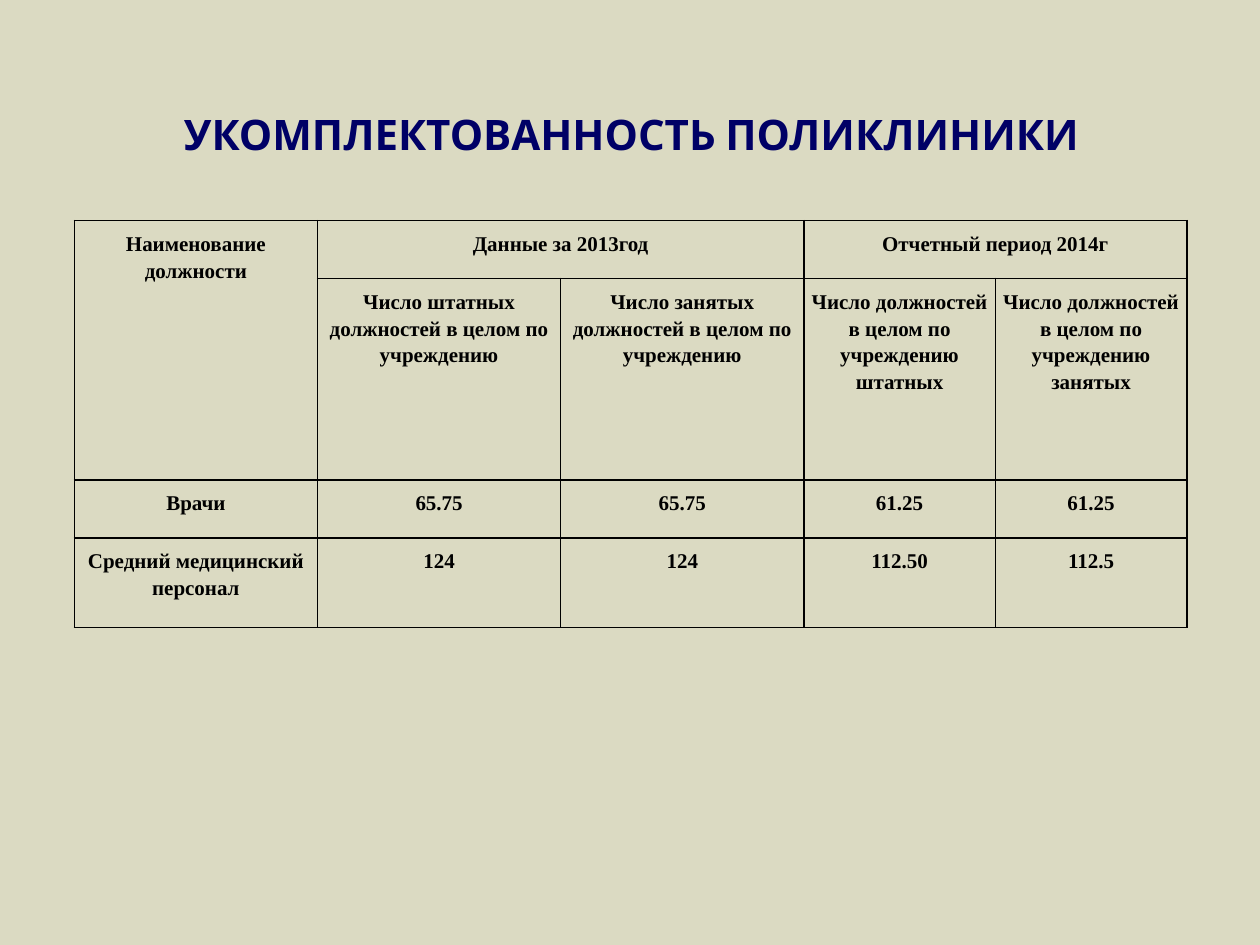
from dataclasses import dataclass

from lxml import etree
from pptx import Presentation
from pptx.dml.color import RGBColor
from pptx.enum.text import MSO_ANCHOR, PP_ALIGN
from pptx.oxml.ns import qn
from pptx.slide import Slide
from pptx.util import Inches, Pt

CENTER = PP_ALIGN.CENTER
MIDDLE = MSO_ANCHOR.MIDDLE
TOP = MSO_ANCHOR.TOP
BACKGROUND = "DBDAC2"
BLACK = "000000"
NAVY = "000066"
BLANK_LAYOUT = 6
COLUMN_WIDTHS = [1.93, 1.93, 1.93, 1.52, 1.52]
ROW_HEIGHTS = [0.46, 1.6, 0.46, 0.71]
MERGES = [((0, 0), (1, 0)), ((0, 1), (0, 2)), ((0, 3), (0, 4))]
STAFFING = [
    ["Наименование должности", "Данные за 2013год", "", "Отчетный период 2014г", ""],
    [
        "",
        "Число штатных должностей в целом по учреждению",
        "Число занятых должностей в целом по учреждению",
        "Число должностей в целом по учреждению штатных",
        "Число должностей в целом по учреждению занятых",
    ],
    ["Врачи", "65.75", "65.75", "61.25", "61.25"],
    ["Средний медицинский персонал", "124", "124", "112.50", "112.5"],
]


@dataclass
class TextStyle:
    """Font and line spacing of a centred paragraph."""

    font: str
    size: float
    color: str
    line_spacing: float


TITLE_STYLE = TextStyle("Cabin", 24, NAVY, 1.0)
CELL_STYLE = TextStyle("Times New Roman", 12, BLACK, 1.15)


def rgb(color: str) -> RGBColor:
    """Turn a hex string into a colour."""
    return RGBColor.from_string(color)


def set_attributes(target, values: dict) -> None:
    """Set each named attribute on the target."""
    for name, value in values.items():
        setattr(target, name, value)


def write_text(text_frame, text: str, style: TextStyle) -> None:
    """Write one centred bold paragraph."""
    paragraph = text_frame.paragraphs[0]
    set_attributes(paragraph, {"alignment": CENTER, "line_spacing": style.line_spacing})
    run = paragraph.add_run()
    run.text = text
    set_attributes(run.font, {"name": style.font, "size": Pt(style.size), "bold": True})
    run.font.color.rgb = rgb(style.color)


def add_borders(cell, color: str, width: float) -> None:
    """Draw a solid line on all four sides of a cell."""
    properties = cell._tc.get_or_add_tcPr()
    for index, side in enumerate(("lnL", "lnR", "lnT", "lnB")):
        line = etree.Element(qn(f"a:{side}"), w=str(Pt(width)))
        fill = etree.SubElement(line, qn("a:solidFill"))
        etree.SubElement(fill, qn("a:srgbClr"), val=color)
        properties.insert(index, line)


def add_title(slide: Slide, text: str) -> None:
    """Add the slide heading."""
    shape = slide.shapes.add_textbox(Inches(0.51), Inches(0.6), Inches(9), Inches(0.92))
    set_attributes(shape.text_frame, {"word_wrap": True, "vertical_anchor": MIDDLE})
    write_text(shape.text_frame, text, TITLE_STYLE)


def add_staffing_table(slide: Slide) -> None:
    """Add the staffing table with its merged headers."""
    table = slide.shapes.add_table(
        len(ROW_HEIGHTS), len(COLUMN_WIDTHS), Inches(0.59), Inches(1.75),
        Inches(sum(COLUMN_WIDTHS)), Inches(sum(ROW_HEIGHTS)),
    ).table
    set_attributes(table, {"first_row": False, "horz_banding": False})
    for column, width in zip(table.columns, COLUMN_WIDTHS):
        column.width = Inches(width)
    for row, height in zip(table.rows, ROW_HEIGHTS):
        row.height = Inches(height)
    cell_format = {
        "margin_left": Inches(0.04),
        "margin_right": Inches(0.04),
        "margin_top": Inches(0.07),
        "margin_bottom": Inches(0.07),
        "vertical_anchor": TOP,
    }
    for row, texts in zip(table.rows, STAFFING):
        for cell, text in zip(row.cells, texts):
            set_attributes(cell, cell_format)
            cell.fill.background()
            add_borders(cell, BLACK, 1)
            if text:
                write_text(cell.text_frame, text, CELL_STYLE)
    for first, last in MERGES:
        table.cell(*first).merge(table.cell(*last))


def main() -> None:
    """Build and save the presentation."""
    presentation = Presentation()
    set_attributes(presentation, {"slide_width": Inches(10), "slide_height": Inches(7.5)})
    slide = presentation.slides.add_slide(presentation.slide_layouts[BLANK_LAYOUT])
    slide.background.fill.solid()
    slide.background.fill.fore_color.rgb = rgb(BACKGROUND)
    add_title(slide, "УКОМПЛЕКТОВАННОСТЬ ПОЛИКЛИНИКИ")
    add_staffing_table(slide)
    presentation.save("out.pptx")


if __name__ == "__main__":
    main()
